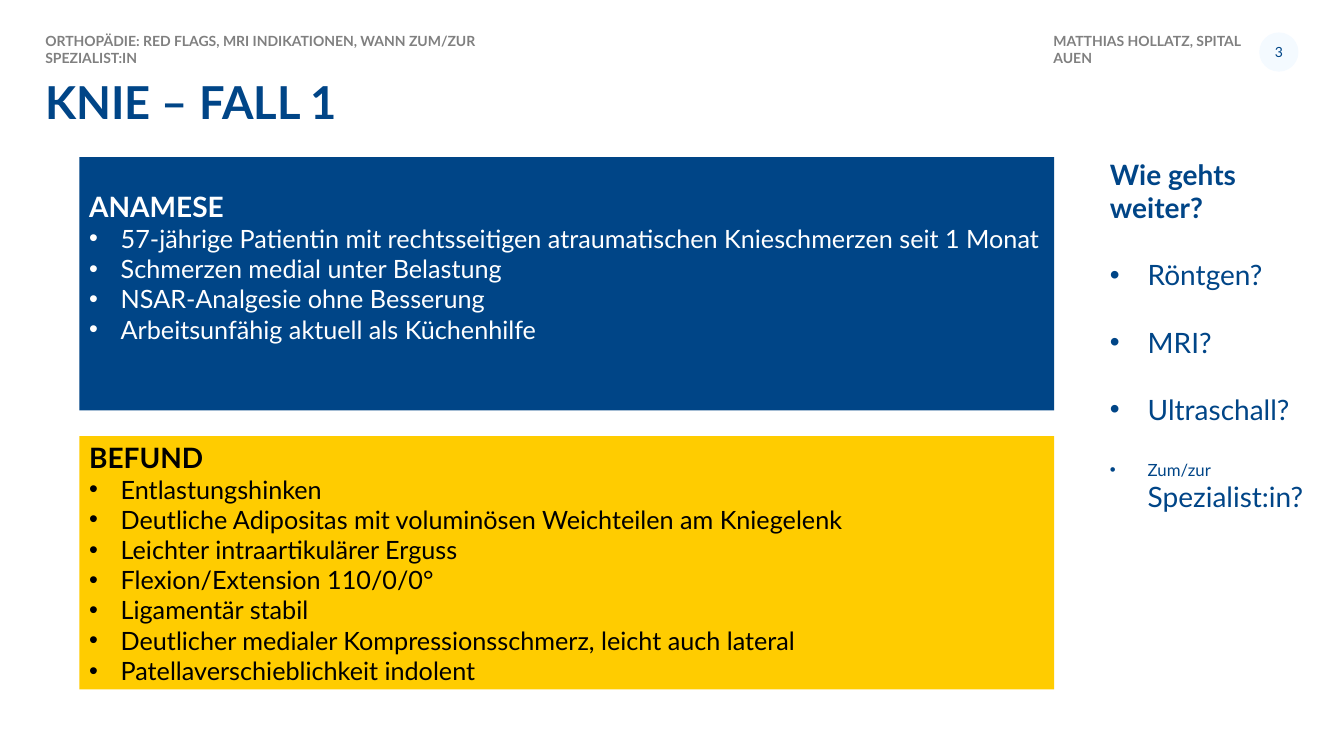
from dataclasses import dataclass

from lxml.etree import SubElement
from pptx import Presentation
from pptx.dml.color import RGBColor
from pptx.enum.shapes import MSO_SHAPE as Preset
from pptx.enum.text import MSO_ANCHOR as Anchor, PP_ALIGN as Align
from pptx.oxml.ns import qn
from pptx.util import Pt


@dataclass(frozen=True)
class Theme:
    font: str = "Lato"
    blue: str = "004587"
    yellow: str = "FFCC00"
    pale: str = "F4FAFF"
    gray: str = "808080"
    white: str = "FFFFFF"
    black: str = "000000"
    title: float = 32.4
    heading: float = 20
    body: float = 18
    small: float = 12
    header: float = 10


@dataclass(frozen=True)
class Box:
    left: float
    top: float
    width: float
    height: float

    def lengths(self):
        return [Pt(n) for n in (self.left, self.top, self.width, self.height)]


THEME = Theme()
LINE_HEIGHT = 1.2


def prepare_frame(shape, side=0, edge=0, anchor=Anchor.TOP):
    frame = shape.text_frame
    frame.word_wrap = True
    frame.margin_left = frame.margin_right = Pt(side)
    frame.margin_top = frame.margin_bottom = Pt(edge)
    frame.vertical_anchor = anchor
    return frame


def add_text_box(slide, box):
    return prepare_frame(slide.shapes.add_textbox(*box.lengths()))


def add_filled_shape(slide, preset, box, color):
    shape = slide.shapes.add_shape(preset, *box.lengths())
    shape.shadow.inherit = False
    shape.fill.solid()
    shape.fill.fore_color.rgb = RGBColor.from_string(color)
    shape.line.fill.background()
    return shape


def add_run(paragraph, text, size, color, bold=False):
    run = paragraph.add_run()
    run.text = text
    run.font.name = THEME.font
    run.font.size = Pt(size)
    run.font.bold = bold
    run.font.color.rgb = RGBColor.from_string(color)


def add_bullet(frame, runs, indent, color, gap=0):
    paragraph = frame.add_paragraph()
    paragraph.alignment = Align.LEFT
    paragraph.space_before = Pt(gap)
    properties = paragraph._p.get_or_add_pPr()
    properties.set("marL", str(Pt(indent)))
    properties.set("indent", str(-Pt(indent)))
    SubElement(properties, qn("a:buFont"), typeface="Arial")
    SubElement(properties, qn("a:buChar"), char="•")
    for text, size in runs:
        add_run(paragraph, text, size, color)


def add_header(slide, box, topic, author, number):
    badge_size = 28
    author_width = 147
    badge_left = box.left + box.width - badge_size
    columns = (
        (topic, box.left, 348.5),
        (author, badge_left - author_width, author_width),
    )
    for text, left, width in columns:
        frame = add_text_box(slide, Box(left, box.top, width, 15))
        add_run(frame.paragraphs[0], text, THEME.header, THEME.gray, True)
    badge_box = Box(badge_left, box.top, badge_size, badge_size)
    badge = add_filled_shape(slide, Preset.OVAL, badge_box, THEME.pale)
    paragraph = prepare_frame(badge, anchor=Anchor.MIDDLE).paragraphs[0]
    paragraph.alignment = Align.CENTER
    add_run(paragraph, number, THEME.header, THEME.blue)


def add_title(slide, box, text):
    paragraph = add_text_box(slide, box).paragraphs[0]
    paragraph.line_spacing = 0.9
    add_run(paragraph, text, THEME.title, THEME.blue, True)


def add_panel(slide, box, heading, items, fill, color, space_below=0):
    panel = add_filled_shape(slide, Preset.RECTANGLE, box, fill)
    frame = prepare_frame(panel, 7.2, 3.6, Anchor.MIDDLE)
    frame.margin_bottom = Pt(3.6 + space_below)
    paragraph = frame.paragraphs[0]
    paragraph.alignment = Align.LEFT
    add_run(paragraph, heading, THEME.heading, color, True)
    for item in items:
        add_bullet(frame, [(item, THEME.body)], 22.5, color)


def add_questions(slide, box, heading, questions):
    frame = add_text_box(slide, box)
    add_run(frame.paragraphs[0], heading, THEME.heading, THEME.blue, True)
    for runs in questions:
        add_bullet(frame, runs, 27, THEME.blue, THEME.heading * LINE_HEIGHT)


def main():
    presentation = Presentation()
    presentation.slide_width = Pt(960)
    presentation.slide_height = Pt(540)
    slide = presentation.slides.add_slide(presentation.slide_layouts[6])

    add_title(slide, Box(32.4, 57.6, 895.6, 36.7), "KNIE – FALL 1")
    add_header(
        slide,
        Box(32.4, 23.2, 895.1, 28),
        "ORTHOPÄDIE: RED FLAGS, MRI INDIKATIONEN, WANN ZUM/ZUR SPEZIALIST:IN",
        "MATTHIAS HOLLATZ, SPITAL AUEN",
        "3",
    )

    history = [
        "57-jährige Patientin mit rechtsseitigen atraumatischen Knieschmerzen seit 1 Monat",
        "Schmerzen medial unter Belastung",
        "NSAR-Analgesie ohne Besserung",
        "Arbeitsunfähig aktuell als Küchenhilfe",
    ]
    findings = [
        "Entlastungshinken",
        "Deutliche Adipositas mit voluminösen Weichteilen am Kniegelenk",
        "Leichter intraartikulärer Erguss",
        "Flexion/Extension 110/0/0°",
        "Ligamentär stabil",
        "Deutlicher medialer Kompressionsschmerz, leicht auch lateral",
        "Patellaverschieblichkeit indolent",
    ]
    panels = (
        ("ANAMESE", history, THEME.blue, THEME.white, THEME.heading * LINE_HEIGHT),
        ("BEFUND", findings, THEME.yellow, THEME.black, 0),
    )
    content_top = 112.2
    panel_height, panel_gap = 180.9, 18.5
    for row, panel in enumerate(panels):
        top = content_top + row * (panel_height + panel_gap)
        add_panel(slide, Box(56.6, top, 696.4, panel_height), *panel)

    questions = [
        [(text, THEME.heading)] for text in ("Röntgen?", "MRI?", "Ultraschall?")
    ]
    questions.append([("Zum/zur ", THEME.small), ("Spezialist:in?", THEME.heading)])
    add_questions(
        slide, Box(792.8, content_top, 159, 384.5), "Wie gehts weiter?", questions
    )
    presentation.save("out.pptx")


if __name__ == "__main__":
    main()
